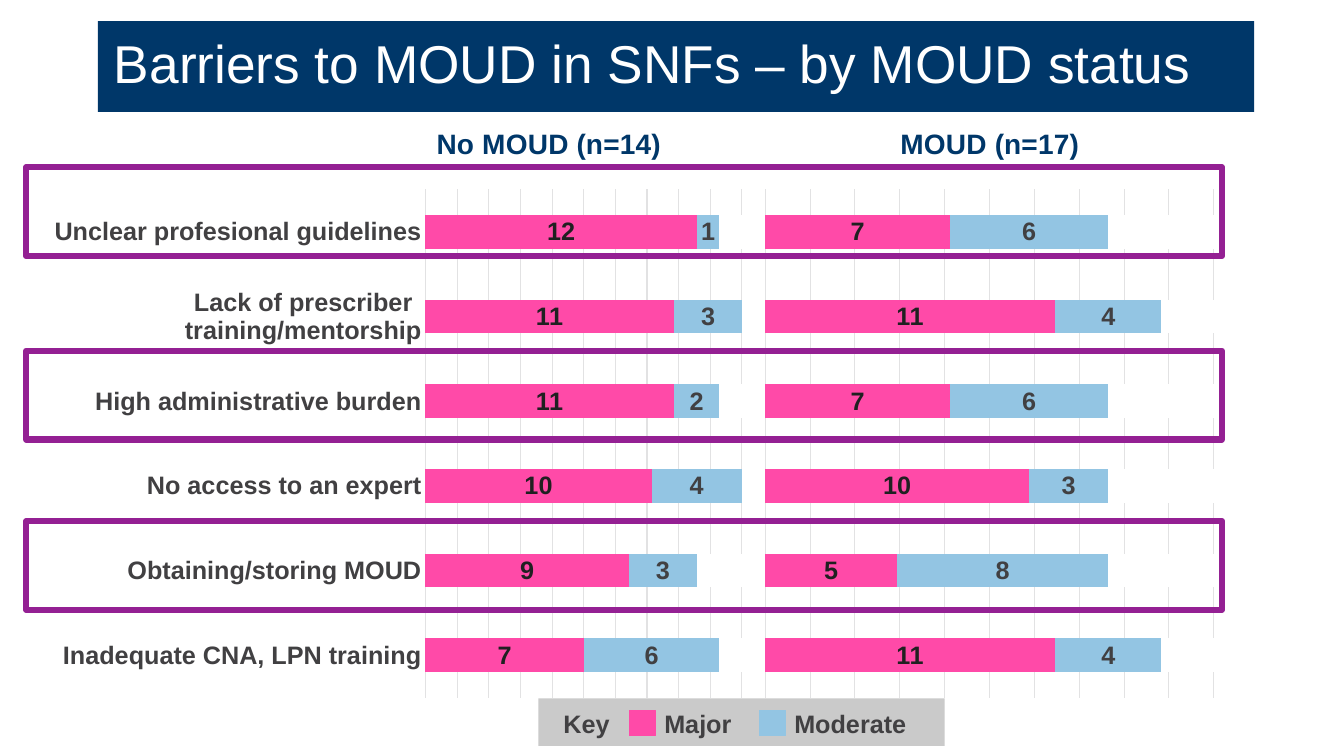
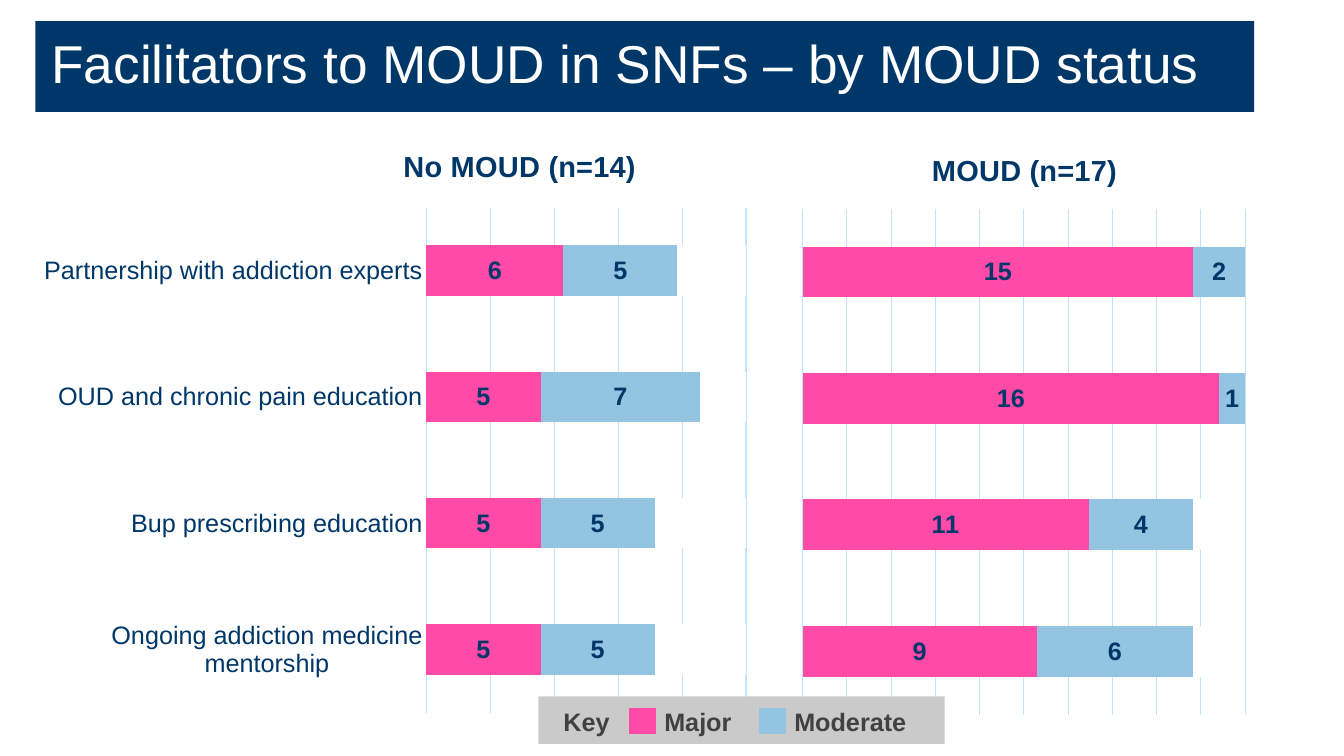
from pptx import Presentation
from pptx.chart.data import CategoryChartData as Data
from pptx.dml.color import RGBColor
from pptx.enum.chart import XL_CHART_TYPE as Kind, XL_LABEL_POSITION as Spot, XL_TICK_MARK as Tick
from pptx.enum.shapes import MSO_SHAPE as Form
from pptx.enum.text import MSO_ANCHOR as Anchor, MSO_AUTO_SIZE as Fit, PP_ALIGN as Align
from pptx.oxml import parse_xml
from pptx.oxml.ns import nsdecls, qn
from pptx.util import Inches, Pt

FONT = "Arial"
NAVY, WHITE, GREY, DARK = "003769", "FFFFFF", "414042", "202021"
PINK, BLUE, BAND, PURPLE = "FF4AA8", "93C5E3", "CACACA", "942093"
SMOKE, SKY = "E2E2E3", "C2E2FF"

BARRIERS = dict(
    title="Barriers to MOUD in SNFs – by MOUD status",
    left=0.97,
    key=6.93,
    look=dict(grid=SMOKE, head=20, names=dict(color=GREY, bold=True), inks=(DARK, GREY)),
    charts=[
        dict(title="MOUD (n=17)", box=(7.5, 1.12, 4.62, 5.92),
             plot=(7.59, 1.88, 4.45, 5.04), spot=(8.88, 1.2), step=0.1,
             names=None,
             rows=[(11, 5, 10, 7, 11, 7), (4, 8, 3, 6, 4, 6), (2, 4, 4, 4, 2, 4)]),
        dict(title="No MOUD (n=14)", box=(0.4, 1.12, 7.11, 5.92),
             plot=(4.22, 1.88, 3.14, 5.04), spot=(4.28, 1.2), step=0.1,
             names=["Inadequate CNA, LPN training", "Obtaining/storing MOUD",
                    "No access to an expert", "High administrative burden",
                    "Lack of prescriber training/mentorship",
                    "Unclear profesional guidelines"],
             rows=[(7, 9, 10, 11, 11, 12), (6, 3, 4, 2, 3, 1), (1, 2, 0, 1, 0, 1)]),
    ],
    frames=(1.66, 3.48, 5.17),
)
HELPERS = dict(
    title="Facilitators to MOUD in SNFs – by MOUD status",
    left=0.35,
    key=6.91,
    look=dict(grid=SKY, head=20.7, names=dict(color=NAVY, bold=False), inks=(NAVY, NAVY)),
    charts=[
        dict(title="No MOUD (n=14)", box=(0.29, 1.27, 7.25, 5.92),
             plot=(4.23, 2.06, 3.17, 5.01), spot=(3.95, 1.41), step=0.2,
             names=["Ongoing addiction medicine mentorship", "Bup prescribing education",
                    "OUD and chronic pain education",
                    "Partnership with addiction experts"],
             rows=[(5, 5, 5, 6), (5, 5, 7, 5), (4, 4, 2, 3)]),
        dict(title="MOUD (n=17)", box=(7.87, 1.28, 4.57, 5.92),
             plot=(7.96, 2.07, 4.39, 5.02), spot=(9.19, 1.45), step=0.1,
             names=None,
             rows=[(9, 11, 16, 15), (6, 4, 1, 2), (2, 2, 0, 0)]),
    ],
    frames=(),
)


def rgb(code):
    return RGBColor.from_string(code)


def apply(item, **values):
    for name, value in values.items():
        setattr(item, name, value)


def style(font, size, color, bold=False):
    apply(font, name=FONT, size=Pt(size), bold=bold)
    font.color.rgb = rgb(color)


def paint(item, color):
    item.fill.solid()
    item.fill.fore_color.rgb = rgb(color)


def stroke(line, color, width=0.75):
    line.color.rgb = rgb(color)
    line.width = Pt(width)


def rect(shapes, box, fill=None, line=None, width=0.75):
    shape = shapes.add_shape(Form.RECTANGLE, *map(Inches, box))
    shape.shadow.inherit = False
    if fill:
        paint(shape, fill)
    else:
        shape.fill.background()
    if line:
        stroke(shape.line, line, width)
    else:
        shape.line.fill.background()


def label(shapes, text, box):
    frame = shapes.add_textbox(*map(Inches, box)).text_frame
    frame.word_wrap = True
    run = frame.paragraphs[0].add_run()
    run.text = text
    style(run.font, 18, GREY, True)


def header(slide, text, left):
    title = slide.shapes.title
    apply(title, left=Inches(left), top=Inches(0.21),
          width=Inches(12.44 - left), height=Inches(0.9))
    paint(title, NAVY)
    frame = title.text_frame
    sides = ("left", "top", "right", "bottom")
    apply(frame, text=text, word_wrap=True, auto_size=Fit.NONE,
          vertical_anchor=Anchor.MIDDLE,
          **{f"margin_{side}": Inches(0.16) for side in sides})
    para = frame.paragraphs[0]
    apply(para, alignment=Align.LEFT, line_spacing=0.9)
    style(para.runs[0].font, 38, WHITE)


def place(host, index, box, area):
    """Pin a chart part at area, in slide inches, inside the chart's box."""
    left, top, wide, high = box
    parts = [("x", (area[0] - left) / wide), ("y", (area[1] - top) / high)]
    tags = '<c:xMode val="edge"/><c:yMode val="edge"/>'
    if len(area) == 4:
        tags = '<c:layoutTarget val="inner"/>' + tags
        parts += [("w", area[2] / wide), ("h", area[3] / high)]
    tags += "".join(f'<c:{name} val="{value:.4f}"/>' for name, value in parts)
    for old in host.findall(qn("c:layout")):
        host.remove(old)
    host.insert(index, parse_xml(
        f'<c:layout {nsdecls("c")}><c:manualLayout>{tags}</c:manualLayout></c:layout>'))


def bars(slide, part, look):
    data = Data()
    names, rows, box = part["names"], part["rows"], part["box"]
    data.categories = names or [str(i + 1) for i in range(len(rows[0]))]
    for i, row in enumerate(rows, 1):
        data.add_series(f"Series {i}", row)
    chart = slide.shapes.add_chart(Kind.BAR_STACKED_100, *map(Inches, box), data).chart
    chart.has_legend = False
    style(chart.font, 10, GREY)

    chart.has_title = True
    head = chart.chart_title
    run = head.text_frame.paragraphs[0].add_run()
    run.text = part["title"]
    style(run.font, look["head"], NAVY, True)
    place(head._element, 1, box, part["spot"])
    place(chart._chartSpace.chart.plotArea, 0, box, part["plot"])

    plot = chart.plots[0]
    apply(plot, gap_width=150, overlap=100, vary_by_categories=False)
    for series, color in zip(plot.series, (PINK, BLUE, WHITE)):
        paint(series.format, color)
    for series, ink in zip(plot.series, look["inks"]):
        tags = series.data_labels
        apply(tags, show_value=True, position=Spot.CENTER)
        style(tags.font, 18, ink, True)

    axis = chart.value_axis
    apply(axis, visible=False, minimum_scale=0, maximum_scale=1,
          major_unit=part["step"], has_major_gridlines=True)
    stroke(axis.major_gridlines.format.line, look["grid"])
    axis = chart.category_axis
    axis.visible = bool(names)
    if names:
        apply(axis, major_tick_mark=Tick.NONE, minor_tick_mark=Tick.NONE)
        style(axis.tick_labels.font, 18, **look["names"])
        stroke(axis.format.line, look["grid"])


def legend(slide, top):
    shapes = slide.shapes.add_group_shape().shapes
    rect(shapes, (5.34, top, 4.03, 0.47), BAND)
    label(shapes, "Key", (5.49, top + 0.05, 0.95, 0.4))
    for text, left, wide, color in (("Major", 6.24, 0.95, PINK),
                                    ("Moderate", 7.53, 1.43, BLUE)):
        rect(shapes, (left, top + 0.12, 0.26, 0.25), color, color)
        label(shapes, text, (left + 0.25, top + 0.05, wide, 0.4))


def build(deck, page):
    slide = deck.slides.add_slide(deck.slide_layouts.get_by_name("Title Only"))
    header(slide, page["title"], page["left"])
    for part in page["charts"]:
        bars(slide, part, page["look"])
    legend(slide, page["key"])
    for top in page["frames"]:
        rect(slide.shapes, (0.26, top, 11.86, 0.88), line=PURPLE, width=4.5)


def main():
    deck = Presentation()
    apply(deck, slide_width=Inches(13.33), slide_height=Inches(7.5))
    for page in (BARRIERS, HELPERS):
        build(deck, page)
    deck.save("out.pptx")


if __name__ == "__main__":
    main()
